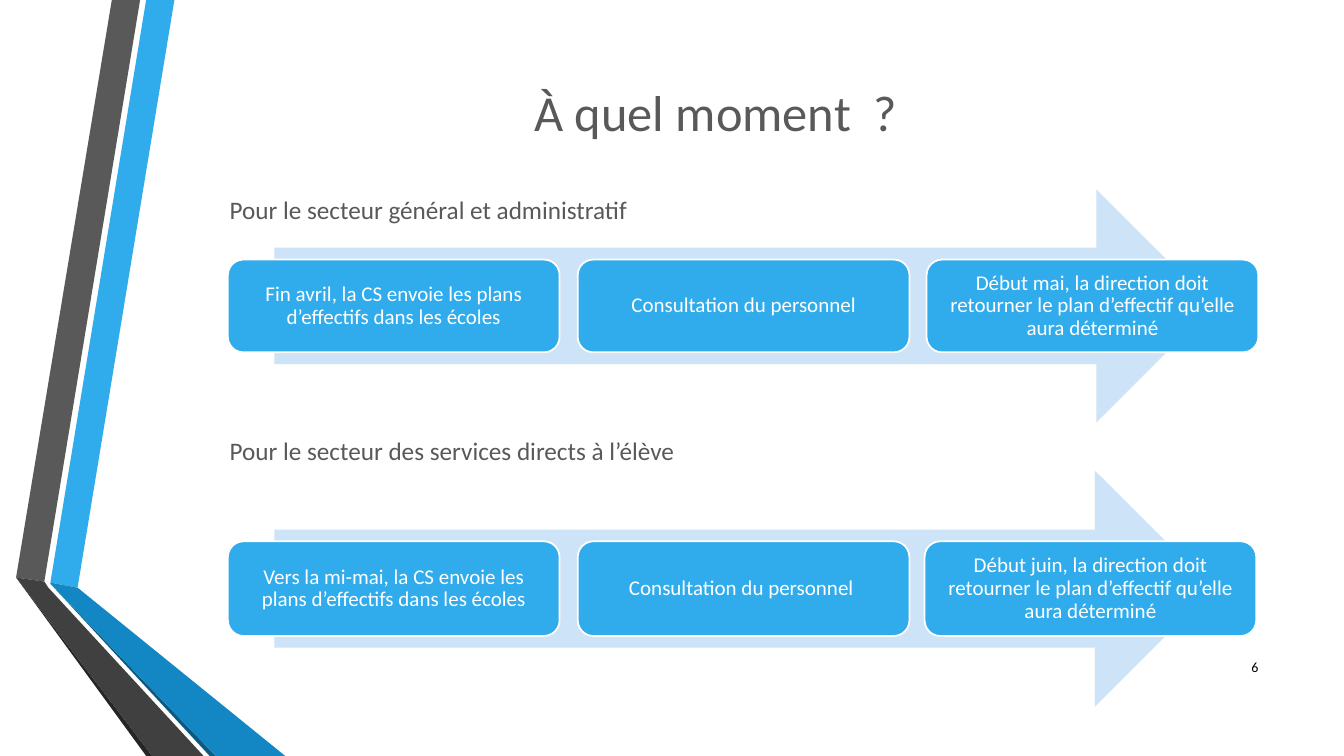
from pptx import Presentation
from pptx.dml.color import RGBColor
from pptx.enum.shapes import MSO_SHAPE as SHAPE
from pptx.enum.text import MSO_ANCHOR as ANCHOR, PP_ALIGN as ALIGN
from pptx.util import Inches, Pt

BLUE = RGBColor(0x30, 0xAC, 0xEC)
MID_BLUE = RGBColor(0x12, 0x87, 0xC3)
DARK_BLUE = RGBColor(0x0C, 0x5A, 0x82)
PALE_BLUE = RGBColor(0xCD, 0xE3, 0xF8)
GRAY = RGBColor(0x59, 0x59, 0x59)
DARK_GRAY = RGBColor(0x40, 0x40, 0x40)
NEAR_BLACK = RGBColor(0x26, 0x26, 0x26)
BLACK = RGBColor(0, 0, 0)
WHITE = RGBColor(0xFF, 0xFF, 0xFF)


def set_text(sp, text, size, color, align=ALIGN.LEFT, anchor=ANCHOR.TOP):
    tf = sp.text_frame
    tf.word_wrap = True
    tf.vertical_anchor = anchor
    p = tf.paragraphs[0]
    p.alignment = align
    r = p.add_run()
    r.text = text
    for name, value in {"name": "Calibri", "size": Pt(size), "bold": False}.items():
        setattr(r.font, name, value)
    r.font.color.rgb = color
    return tf


def paint(sp, fill, line=None):
    sp.shadow.inherit = False
    sp.fill.solid()
    sp.fill.fore_color.rgb = fill
    if line is None:
        sp.line.fill.background()
    else:
        sp.line.color.rgb = line
        sp.line.width = Pt(1.25)


prs = Presentation()
prs.slide_width, prs.slide_height = Inches(13.33), Inches(7.5)
s = prs.slides.add_slide(prs.slide_layouts[5])
shapes = s.shapes

# Folded ribbons on the left edge
ribbons = [
    (BLUE, [(0.5, 5.78), (0.77, 5.83), (1.73, 0), (1.45, 0)]),
    (GRAY, [(1.39, 0), (1.11, 0), (0.16, 5.73), (0.44, 5.77)]),
    (NEAR_BLACK, [(0.16, 5.73), (1.45, 7.5), (1.51, 7.5)]),
    (DARK_BLUE, [(0.5, 5.79), (2.08, 7.5), (2.14, 7.5)]),
    (MID_BLUE, [(0.5, 5.78), (0.5, 5.79), (2.14, 7.5), (2.83, 7.5), (0.77, 5.83)]),
    (DARK_GRAY, [(2.02, 7.5), (0.48, 5.83), (0.44, 5.77), (0.16, 5.73), (1.51, 7.5)]),
]
for color, corners in ribbons:
    points = [(Inches(x), Inches(y)) for x, y in corners]
    outline = shapes.build_freeform(*points[0])
    outline.add_line_segments(points[1:])
    paint(outline.convert_to_shape(), color)

title = shapes.title
title.left, title.top = Inches(1.62), Inches(0.75)
title.width, title.height = Inches(10.96), Inches(0.7)
set_text(title, "À quel moment  ?", 36, GRAY, ALIGN.CENTER, ANCHOR.MIDDLE)

# One timeline per sector: heading, heading top and width, arrow top and height,
# step height, left edge of the last step, steps
timelines = [
    ("Pour le secteur général et administratif", 1.88, 4.66, 1.88, 2.31, 0.92, 9.19,
     ["Fin avril, la CS envoie les plans d’effectifs dans les écoles",
      "Consultation du personnel",
      "Début mai, la direction doit retourner le plan d’effectif qu’elle aura déterminé"]),
    ("Pour le secteur des services directs à l’élève", 4.27, 5.17, 4.67, 2.34, 0.94, 9.17,
     ["Vers la mi-mai, la CS envoie les plans d’effectifs dans les écoles",
      "Consultation du personnel ",
      "Début juin, la direction doit retourner le plan d’effectif qu’elle aura déterminé"]),
]
for heading, heading_top, heading_w, top, height, step_h, last_left, steps in timelines:
    arrow = shapes.add_shape(SHAPE.RIGHT_ARROW, Inches(2.72), Inches(top),
                             Inches(9.31), Inches(height))
    paint(arrow, PALE_BLUE)

    step_top = top + (height - step_h) / 2
    for left, text in zip((2.26, 5.73, last_left), steps):
        step = shapes.add_shape(SHAPE.ROUNDED_RECTANGLE, Inches(left), Inches(step_top),
                                Inches(3.29), Inches(step_h))
        paint(step, BLUE, WHITE)
        tf = set_text(step, text, 15, WHITE, ALIGN.CENTER, ANCHOR.MIDDLE)
        for side in ("left", "right", "top", "bottom"):
            setattr(tf, f"margin_{side}", Inches(0.06))
        tf.paragraphs[0].line_spacing = 0.9

    box = shapes.add_textbox(Inches(2.18), Inches(heading_top), Inches(heading_w), Inches(0.4))
    set_text(box, heading, 18, GRAY)

number = shapes.add_textbox(Inches(11.98), Inches(6.42), Inches(0.6), Inches(0.4))
set_text(number, "6", 10, BLACK, ALIGN.RIGHT, ANCHOR.MIDDLE)

prs.save("out.pptx")
